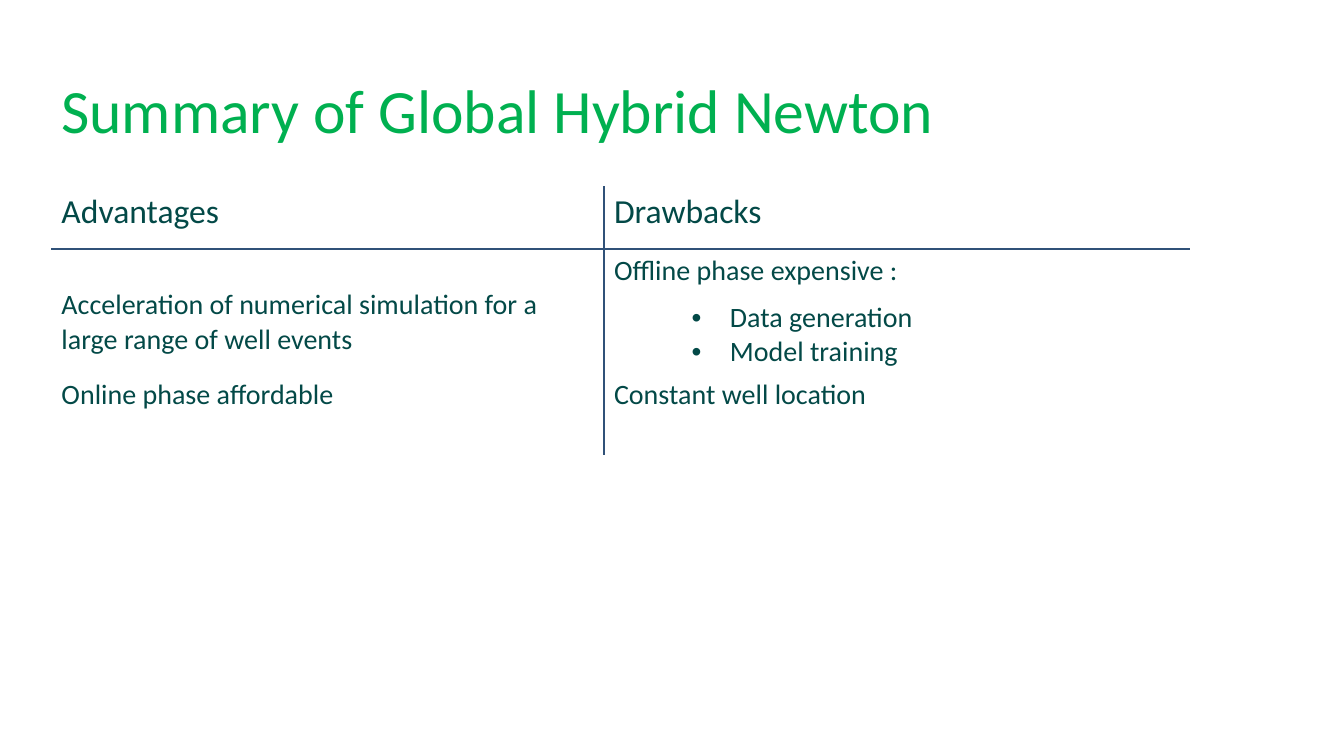
import pptx
import pptx.dml.color
import pptx.enum.text
import pptx.oxml
import pptx.oxml.ns
import pptx.util

inch = pptx.util.Inches
theme = {
    "font": "Calibri",
    "title_color": "00B050", "text_color": "034947", "rule_color": "305178",
    "title_size": 44, "heading_size": 24, "body_size": 20, "rule_width": 1,
}
left, title_top, title_width, title_height = 0.51, 0.4, 11.91, 1.45
column_widths = [5.48, 0.77, 5.04]
row_heights = [0.62, 0.46, 0.77, 0.81]
blank_line = 0.34
bullet_indent = 0.38


def write(paragraph, text, size, color):
    paragraph.text = text
    paragraph.font.name = theme["font"]
    paragraph.font.size = pptx.util.Pt(size)
    paragraph.font.color.rgb = pptx.dml.color.RGBColor.from_string(color)


def add_xml(parent, markup):
    head, tail = markup.split(" ", 1)
    parent.append(pptx.oxml.parse_xml(f"{head} {pptx.oxml.ns.nsdecls('a')} {tail}"))


deck = pptx.Presentation()
deck.slide_width, deck.slide_height = inch(13.33), inch(7.5)
page = deck.slides.add_slide(deck.slide_layouts[6])

title_box = page.shapes.add_textbox(
    inch(left), inch(title_top), inch(title_width), inch(title_height))
title_box.text_frame.word_wrap = True
title_box.text_frame.vertical_anchor = pptx.enum.text.MSO_ANCHOR.MIDDLE
title = title_box.text_frame.paragraphs[0]
title.line_spacing = 0.9
write(title, "Summary of Global Hybrid Newton", theme["title_size"], theme["title_color"])

table = page.shapes.add_table(
    len(row_heights), len(column_widths), inch(left), inch(title_top + title_height),
    inch(sum(column_widths)), inch(sum(row_heights))).table
table.first_row = table.horz_banding = False
for column, width in zip(table.columns, column_widths):
    column.width = inch(width)
for row, height in zip(table.rows, row_heights):
    row.height = inch(height)

for row in range(len(row_heights)):
    for column in range(len(column_widths)):
        cell = table.cell(row, column)
        properties = cell._tc.get_or_add_tcPr()
        ruled_sides = {"L": column == 1, "R": column == 0, "T": row == 1, "B": row == 0}
        for side, ruled in ruled_sides.items():
            paint = (f'<a:solidFill><a:srgbClr val="{theme["rule_color"]}"/></a:solidFill>'
                     if ruled else "<a:noFill/>")
            width = pptx.util.Pt(theme["rule_width"])
            add_xml(properties, f'<a:ln{side} w="{width}">{paint}</a:ln{side}>')
        cell.fill.background()

for row in (0, 1, 3):
    table.cell(row, 1).merge(table.cell(row, 2))
table.cell(1, 0).merge(table.cell(2, 0))
table.cell(1, 0).margin_top = inch(0.05 + blank_line)

entries = [
    (0, 0, ["Advantages"]),
    (0, 1, ["Drawbacks"]),
    (1, 0, ["Acceleration of numerical simulation for a large range of well events"]),
    (1, 1, ["Offline phase expensive :"]),
    (2, 2, ["Data generation", "Model training"]),
    (3, 0, ["Online phase affordable"]),
    (3, 1, ["Constant well location"]),
]
for row, column, lines in entries:
    frame = table.cell(row, column).text_frame
    size = theme["heading_size"] if row == 0 else theme["body_size"]
    for index, line in enumerate(lines):
        para = frame.add_paragraph() if index else frame.paragraphs[0]
        if column == 2:
            bullet = para._p.get_or_add_pPr()
            bullet.set("marL", str(inch(bullet_indent)))
            bullet.set("indent", str(-inch(bullet_indent)))
            add_xml(bullet, '<a:buFont typeface="Arial"/>')
            add_xml(bullet, '<a:buChar char="•"/>')
        write(para, line, size, theme["text_color"])

deck.save("out.pptx")
